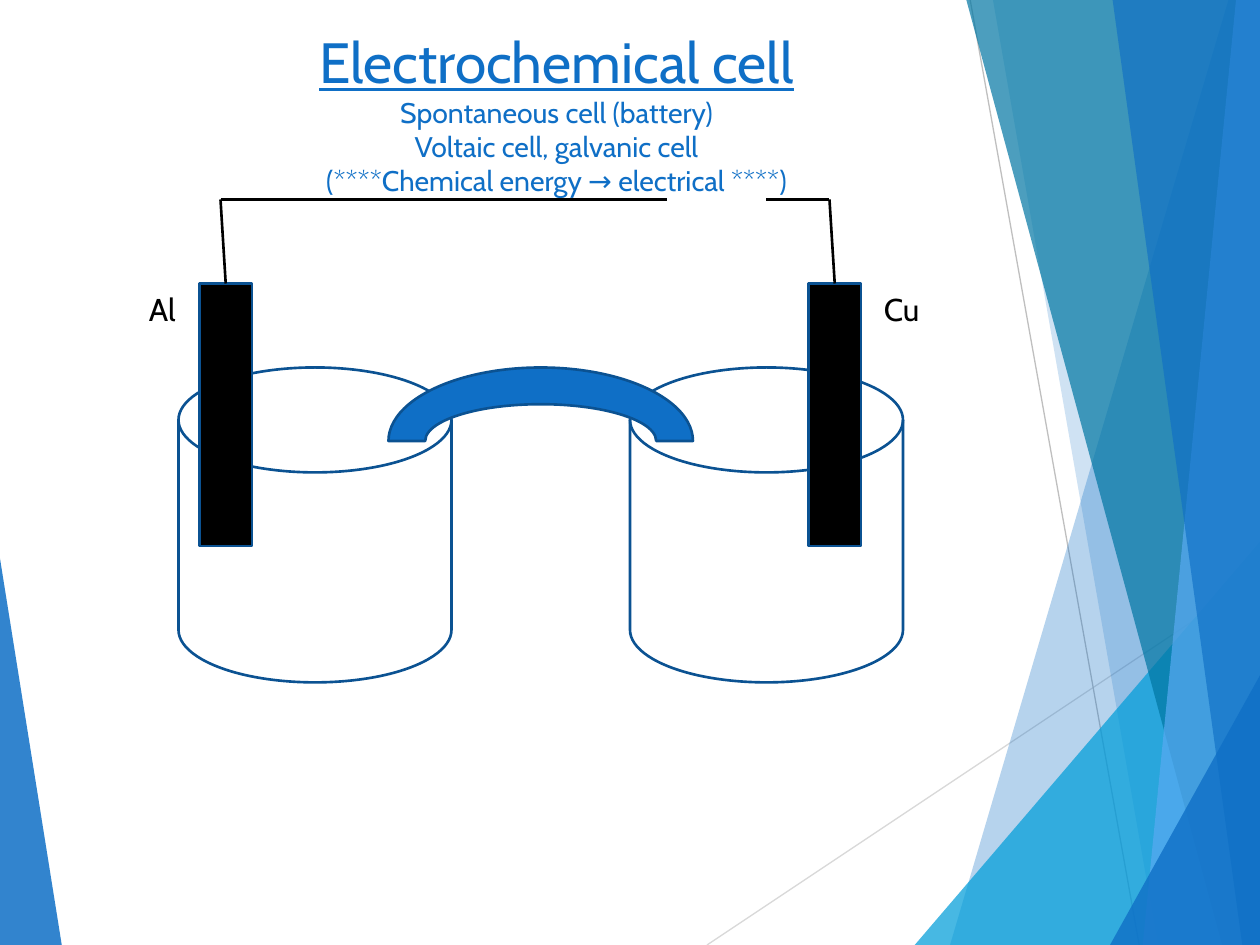
import pptx
import pptx.dml.color
import pptx.enum.shapes
import pptx.enum.text
import pptx.oxml
import pptx.oxml.ns
import pptx.util

Pt = pptx.util.Pt
RGB = pptx.dml.color.RGBColor
SHAPE = pptx.enum.shapes.MSO_SHAPE
qn = pptx.oxml.ns.qn

BLUE = RGB(0x0F, 0x6F, 0xC6)
DARK_BLUE = RGB(0x0B, 0x52, 0x92)
LIGHT_BLUE = RGB(0x59, 0xAA, 0xF2)
CYAN = RGB(0x00, 0x9D, 0xD9)
TEAL = RGB(0x00, 0x76, 0xA3)
PALE_GRAY = RGB(0xD9, 0xD9, 0xD9)
GRAY = RGB(0xBF, 0xBF, 0xBF)
BLACK = RGB(0, 0, 0)
WHITE = RGB(0xFF, 0xFF, 0xFF)

FONT = "Cabin"
WIDTH, HEIGHT = 720, 540
EDGE = 720.5  # right edge of the decorative bands

# Bands: top x, top y, bottom x, colour, opacity in percent
BANDS = [
    (702, 0, 542.9, BLUE, 30),
    (567.4, 0, 661.7, BLUE, 20),
    (EDGE, 309, 522.7, CYAN, 72),
    (552.2, 0, 698.4, TEAL, 70),
    (706.3, 0, 653, LIGHT_BLUE, 70),
    (635.8, 0, 709.9, BLUE, 65),
    (EDGE, 385, 634.3, BLUE, 80),
]


def add_polygon(slide, points, color, opacity):
    corners = [(Pt(x), Pt(y)) for x, y in points]
    builder = slide.shapes.build_freeform(*corners[0])
    builder.add_line_segments(corners[1:], close=True)
    polygon = builder.convert_to_shape()
    polygon.shadow.inherit = False
    polygon.line.fill.background()
    polygon.fill.solid()
    polygon.fill.fore_color.rgb = color
    fill_color = polygon.fill._xPr.find(qn("a:solidFill"))[0]
    alpha = pptx.oxml.parse_xml(
        f'<a:alpha {pptx.oxml.ns.nsdecls("a")} val="{opacity * 1000}"/>')
    fill_color.append(alpha)


def add_line(slide, start, end, color=BLACK, weight=1.5):
    line = slide.shapes.add_connector(
        pptx.enum.shapes.MSO_CONNECTOR.STRAIGHT,
        *(Pt(value) for value in start + end))
    line.line.color.rgb = color
    line.line.width = Pt(weight)
    effects = f'<a:effectLst {pptx.oxml.ns.nsdecls("a")}/>'
    line._element.spPr.append(pptx.oxml.parse_xml(effects))
    return line


def add_part(slide, preset, left, top, width, height, color):
    part = slide.shapes.add_shape(
        preset, Pt(left), Pt(top), Pt(width), Pt(height))
    part.shadow.inherit = False
    part.fill.solid()
    part.fill.fore_color.rgb = color
    part.line.color.rgb = DARK_BLUE
    part.line.width = Pt(1.5)
    return part


def add_text_box(slide, left, top, width, height, wrap):
    frame = slide.shapes.add_textbox(
        Pt(left), Pt(top), Pt(width), Pt(height)).text_frame
    frame.word_wrap = wrap
    return frame


def add_run(paragraph, text, size, color, underline=False):
    run = paragraph.add_run()
    run.text = text
    run.font.name = FONT
    run.font.size = Pt(size)
    run.font.color.rgb = color
    run.font.underline = underline


def add_background(slide):
    add_polygon(slide, [(-0.5, 316), (35.3, HEIGHT), (-0.5, HEIGHT)], BLUE, 85)
    add_line(slide, (404, HEIGHT), (EDGE, 329), PALE_GRAY, 0.75)
    add_line(slide, (554.4, 0), (651, HEIGHT), GRAY, 0.75)
    for top_x, top_y, bottom_x, color, opacity in BANDS:
        points = [(top_x, top_y), (bottom_x, HEIGHT), (EDGE, HEIGHT)]
        if top_x < EDGE:
            points.append((EDGE, top_y))
        add_polygon(slide, points, color, opacity)


def add_title(slide):
    heading = add_text_box(slide, 30, 12, 576, 90, True).paragraphs[0]
    heading.alignment = pptx.enum.text.PP_ALIGN.CENTER
    add_run(heading, "Electrochemical cell", 32.4, BLUE, underline=True)
    for subtitle in ("Spontaneous cell (battery)",
                     "Voltaic cell, galvanic cell",
                     "(****Chemical energy → electrical ****)"):
        heading.add_line_break()
        add_run(heading, subtitle, 16.2, BLUE)


def add_label(slide, text, left, width):
    frame = add_text_box(slide, left, 162, width, 29, False)
    frame.auto_size = pptx.enum.text.MSO_AUTO_SIZE.SHAPE_TO_FIT_TEXT
    add_run(frame.paragraphs[0], text, 18, BLACK)


def add_cell(slide):
    # Beakers and salt bridge
    for left in (102, 360):
        add_part(slide, SHAPE.FLOWCHART_MAGNETIC_DISK,
                 left, 210, 156, 180, WHITE)
    add_part(slide, SHAPE.BLOCK_ARC, 222, 210, 174, 84, BLUE)

    # Electrodes and their labels
    aluminium, copper = [
        add_part(slide, SHAPE.RECTANGLE, left, 162, 30, 150, BLACK)
        for left in (114, 462)]
    add_label(slide, "Al", 78, 30)
    add_label(slide, "Cu", 498, 35)

    # Open circuit: a lead from each electrode, then the horizontal wires
    wire_y = 114
    for electrode, center, corner in ((aluminium, 129, 126),
                                      (copper, 477, 474)):
        lead = add_line(slide, (center, 162), (corner, wire_y))
        lead.begin_connect(electrode, 0)
    for start, end in ((126, 381), (438, 474)):
        add_line(slide, (start, wire_y), (end, wire_y))


def main():
    deck = pptx.Presentation()
    deck.slide_width, deck.slide_height = Pt(WIDTH), Pt(HEIGHT)
    slide = deck.slides.add_slide(deck.slide_layouts[6])
    add_background(slide)
    add_title(slide)
    add_cell(slide)
    deck.save("out.pptx")


if __name__ == "__main__":
    main()
